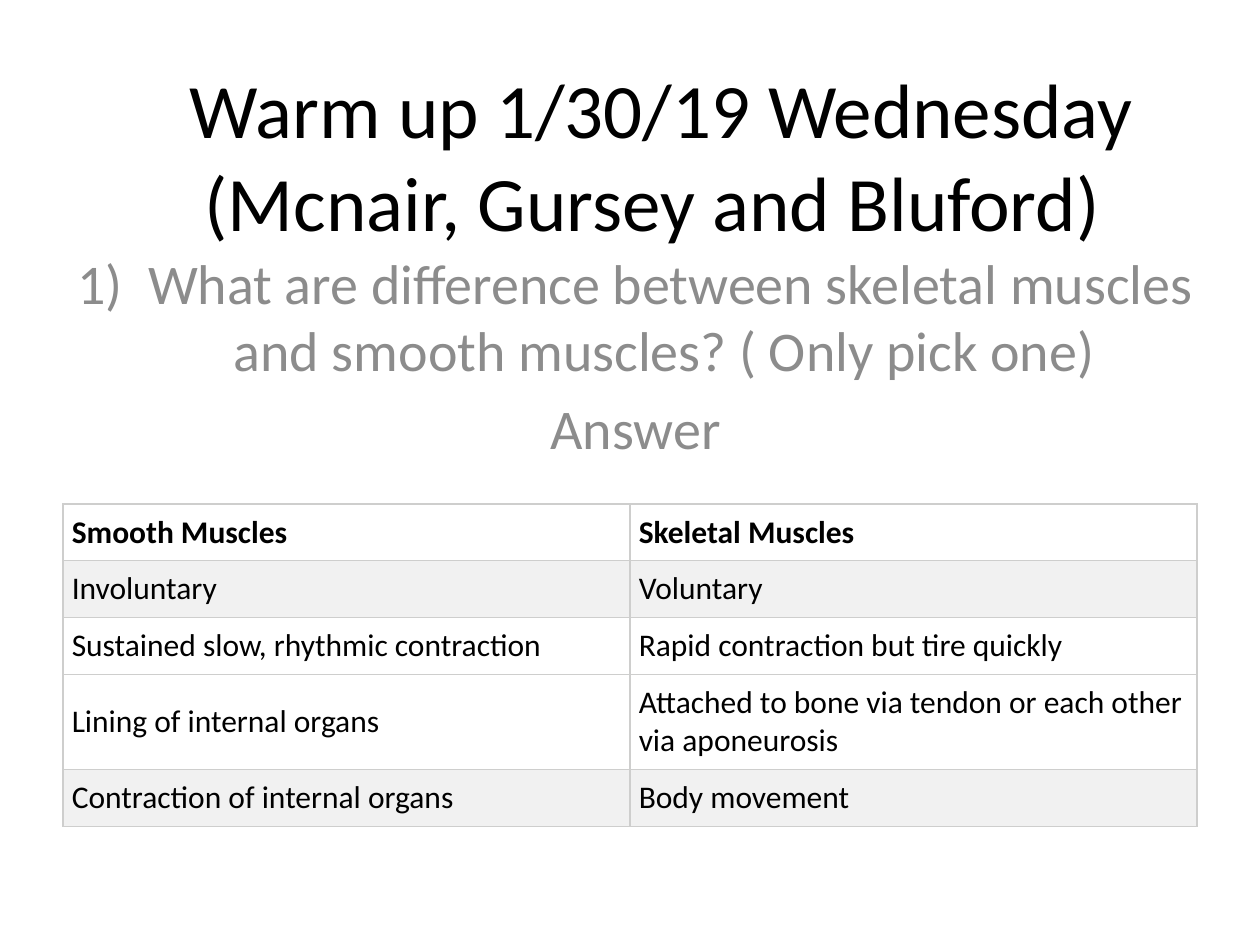
from dataclasses import dataclass

from lxml import etree
from pptx import Presentation
from pptx.dml.color import RGBColor
from pptx.enum.text import MSO_ANCHOR, MSO_AUTO_SIZE, PP_ALIGN
from pptx.oxml.ns import qn
from pptx.util import Inches, Pt

MIDDLE, TOP = MSO_ANCHOR.MIDDLE, MSO_ANCHOR.TOP
CENTER, LEFT = PP_ALIGN.CENTER, PP_ALIGN.LEFT
NO_FIT = MSO_AUTO_SIZE.NONE

FONT = "Calibri"
COLORS = {
    "text": "000000",
    "muted": "8C8C8C",
    "plain": "FFFFFF",
    "shaded": "F1F1F1",
    "border": "CECECD",
}


@dataclass
class Comparison:
    smooth: str
    skeletal: str
    fill: str = "plain"
    height: float = 0.45
    bold: bool = False


COMPARISONS = [
    Comparison("Smooth Muscles", "Skeletal Muscles", bold=True),
    Comparison("Involuntary", "Voluntary", "shaded"),
    Comparison("Sustained slow, rhythmic contraction", "Rapid contraction but tire quickly"),
    Comparison(
        "Lining of internal organs",
        "Attached to bone via tendon or each other via aponeurosis",
        height=0.76,
    ),
    Comparison("Contraction of internal organs", "Body movement", "shaded"),
]


def color(name: str) -> RGBColor:
    return RGBColor.from_string(COLORS[name])


def add_span(para, text: str, size: int, ink: str, bold: bool = False, align=CENTER) -> None:
    para.alignment = align
    span = para.add_run()
    span.text = text
    span.font.name = FONT
    span.font.size = Pt(size)
    span.font.bold = bold
    span.font.color.rgb = color(ink)


def place(box, left: float, top: float, width: float, height: float, anchor) -> None:
    box.left, box.top = Inches(left), Inches(top)
    box.width, box.height = Inches(width), Inches(height)
    box.text_frame.word_wrap = True
    box.text_frame.auto_size = NO_FIT
    box.text_frame.vertical_anchor = anchor


def number_paragraph(para, indent: float) -> None:
    properties = para._p.get_or_add_pPr()
    properties.set("marL", str(Inches(indent)))
    properties.set("indent", str(-Inches(indent)))
    etree.SubElement(properties, qn("a:buFont"), typeface="+mj-lt")
    etree.SubElement(properties, qn("a:buAutoNum"), type="arabicParenR")


def add_borders(cell) -> None:
    properties = cell._tc.get_or_add_tcPr()
    for position, side in enumerate(("lnL", "lnR", "lnT", "lnB")):
        line = etree.Element(qn(f"a:{side}"), w=str(Pt(0.75)))
        solid = etree.SubElement(line, qn("a:solidFill"))
        etree.SubElement(solid, qn("a:srgbClr"), val=COLORS["border"])
        properties.insert(position, line)


def fill_cell(cell, text: str, row: Comparison) -> None:
    cell.margin_left = cell.margin_right = Inches(0.07)
    cell.margin_top = cell.margin_bottom = Inches(0.07)
    cell.vertical_anchor = MIDDLE
    cell.fill.solid()
    cell.fill.fore_color.rgb = color(row.fill)
    add_borders(cell)
    add_span(cell.text_frame.paragraphs[0], text, 18, "text", row.bold, LEFT)


def add_comparison_table(page, rows: list[Comparison]) -> None:
    height = sum(row.height for row in rows)
    frame = page.shapes.add_table(
        len(rows), 2, Inches(0.5), Inches(4), Inches(9), Inches(height)
    )
    table = frame.table
    for index, row in enumerate(rows):
        table.rows[index].height = Inches(row.height)
        for column, text in enumerate((row.smooth, row.skeletal)):
            fill_cell(table.cell(index, column), text, row)


def main() -> None:
    deck = Presentation()
    deck.slide_width, deck.slide_height = Inches(10), Inches(7.5)
    page = deck.slides.add_slide(deck.slide_layouts[0])

    title = page.shapes.title
    place(title, 1, 0.42, 8.5, 1.61, MIDDLE)
    heading = "Warm up 1/30/19 Wednesday (Mcnair, Gursey and Bluford) "
    add_span(title.text_frame.paragraphs[0], heading, 44, "text")

    body = page.placeholders[1]
    place(body, 0.42, 1.92, 9.25, 5.25, TOP)
    question = body.text_frame.paragraphs[0]
    number_paragraph(question, 0.56)
    prompt = "What are difference between skeletal muscles and smooth muscles? ( Only pick one) "
    add_span(question, prompt, 32, "muted")
    add_span(body.text_frame.add_paragraph(), "Answer", 32, "muted")

    add_comparison_table(page, COMPARISONS)
    deck.save("out.pptx")


if __name__ == "__main__":
    main()
